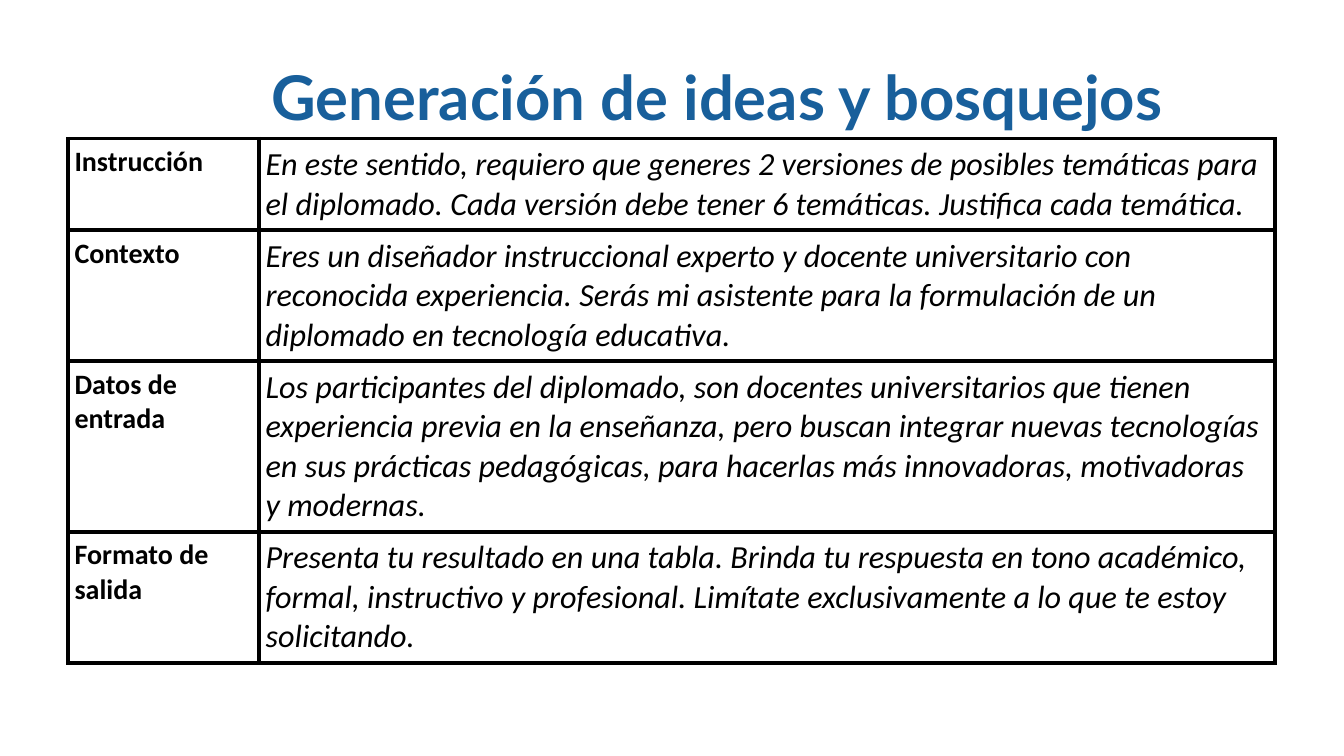
from dataclasses import dataclass

from lxml.etree import SubElement
from pptx import Presentation
from pptx.dml.color import RGBColor
from pptx.enum.text import MSO_ANCHOR, MSO_AUTO_SIZE, PP_ALIGN
from pptx.oxml.ns import qn
from pptx.slide import Slide
from pptx.table import _Cell
from pptx.text.text import Font
from pptx.util import Emu, Pt

SCALE = 9525  # EMU in one px, 96 px to the inch
BLACK, WHITE, BLUE = "000000", "FFFFFF", "185F9B"
PAD = 6
COLS = (182, 967)


@dataclass(frozen=True)
class Part:
    label: str
    prompt: str
    height: int


PARTS = (
    Part("Instrucción",
         "En este sentido, requiero que generes 2 versiones de posibles temáticas para "
         "el diplomado. Cada versión debe tener 6 temáticas. Justifica cada temática.", 87),
    Part("Contexto",
         "Eres un diseñador instruccional experto y docente universitario con "
         "reconocida experiencia. Serás mi asistente para la formulación de un "
         "diplomado en tecnología educativa.", 124),
    Part("Datos de entrada",
         "Los participantes del diplomado, son docentes universitarios que tienen "
         "experiencia previa en la enseñanza, pero buscan integrar nuevas tecnologías "
         "en sus prácticas pedagógicas, para hacerlas más innovadoras, motivadoras "
         "y modernas.", 162),
    Part("Formato de salida",
         "Presenta tu resultado en una tabla. Brinda tu respuesta en tono académico, "
         "formal, instructivo y profesional. Limítate exclusivamente a lo que te estoy "
         "solicitando.", 124),
)


def px(count: int) -> Emu:
    return Emu(count * SCALE)


def paint(target, color: str) -> None:
    target.rgb = RGBColor.from_string(color)


def style(font: Font, name: str, size: int, color: str, bold: bool, slant: bool = False) -> None:
    font.name, font.size = name, Pt(size)
    font.bold, font.italic = bold, slant
    paint(font.color, color)


def border(cell: _Cell, width: int) -> None:
    props = cell._tc.get_or_add_tcPr()
    for side in ("a:lnL", "a:lnR", "a:lnT", "a:lnB"):
        line = SubElement(props, qn(side), w=str(Pt(width)))
        fill = SubElement(line, qn("a:solidFill"))
        SubElement(fill, qn("a:srgbClr"), val=BLACK)


def write(cell: _Cell, text: str, size: int, label: bool) -> None:
    border(cell, 3)
    cell.fill.solid()
    paint(cell.fill.fore_color, WHITE)
    cell.margin_left = cell.margin_right = px(PAD)
    cell.margin_top = cell.margin_bottom = px(PAD)
    cell.text = text
    style(cell.text_frame.paragraphs[0].font, "Calibri", size, BLACK, label, not label)


def add_title(slide: Slide, text: str) -> None:
    title = slide.shapes.title
    title.left, title.top, title.width, title.height = map(px, (249, 48, 1104, 95))
    frame = title.text_frame
    frame.text = text
    frame.word_wrap = True
    frame.auto_size = MSO_AUTO_SIZE.NONE
    frame.vertical_anchor = MSO_ANCHOR.MIDDLE
    para = frame.paragraphs[0]
    para.alignment = PP_ALIGN.LEFT
    para.line_spacing = 0.9
    style(para.font, "Lato", 44, BLUE, True)


def add_parts(slide: Slide) -> None:
    high = sum(part.height for part in PARTS)
    table = slide.shapes.add_table(
        len(PARTS), len(COLS), px(65), px(132), px(sum(COLS)), px(high)).table
    table.first_row = table.horz_banding = False
    for col, width in zip(table.columns, COLS):
        col.width = px(width)
    for row, part in zip(table.rows, PARTS):
        row.height = px(part.height)
        write(row.cells[0], part.label, 20, True)
        write(row.cells[1], part.prompt, 23, False)


def main() -> None:
    deck = Presentation()
    deck.slide_width, deck.slide_height = px(1280), px(720)
    slide = deck.slides.add_slide(deck.slide_layouts[5])

    # Heading
    add_title(slide, "Generación de ideas y bosquejos")

    # Prompt parts
    add_parts(slide)

    deck.save("out.pptx")


if __name__ == "__main__":
    main()
